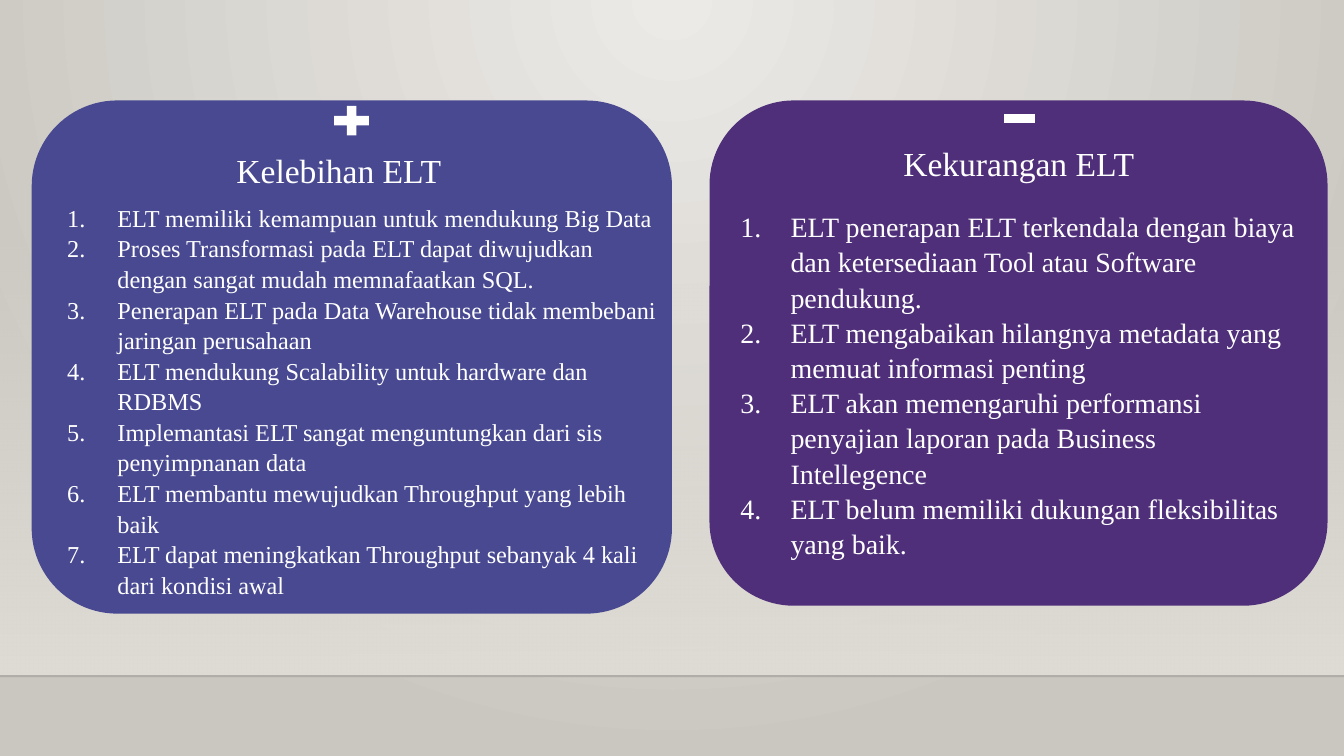
from dataclasses import dataclass

from lxml import etree
from pptx import Presentation
from pptx import util as u
from pptx.dml.color import RGBColor
from pptx.enum import shapes, text
from pptx.oxml.ns import qn


@dataclass(frozen=True)
class Theme:
    font: str = "Times New Roman"
    white: str = "FFFFFF"
    blue: str = "484991"
    purple: str = "4F2F79"
    glow: str = "ECEAE7"
    backdrop: str = "CAC7C1"
    wall: str = "DFDBD5"
    edge: str = "000001"
    heading_size: float = 18
    long_list_size: float = 13
    short_list_size: float = 15


THEME = Theme()
SLIDE_WIDTH, SLIDE_HEIGHT = 25.4, 14.29
FLOOR_TOP = 12.78
COMPARISON_LAYOUT = 4

ADVANTAGES = [
    "ELT memiliki kemampuan untuk mendukung Big Data",
    "Proses Transformasi pada ELT dapat diwujudkan dengan sangat mudah memnafaatkan SQL.",
    "Penerapan ELT pada Data Warehouse tidak membebani jaringan perusahaan",
    "ELT mendukung Scalability untuk hardware dan RDBMS",
    "Implemantasi ELT sangat menguntungkan dari sis penyimpnanan data",
    "ELT membantu mewujudkan Throughput yang lebih baik",
    "ELT dapat meningkatkan Throughput sebanyak 4 kali dari kondisi awal",
]
DRAWBACKS = [
    "ELT penerapan ELT terkendala dengan biaya dan ketersediaan Tool atau Software pendukung.",
    "ELT mengabaikan hilangnya metadata yang memuat informasi penting",
    "ELT akan memengaruhi performansi penyajian laporan pada Business Intellegence",
    "ELT belum memiliki dukungan fleksibilitas yang baik.",
]


def rgb(colour):
    return RGBColor.from_string(colour)


def cm(lengths):
    return [u.Cm(length) for length in lengths]


def add_xml(parent, tag, **attributes):
    return etree.SubElement(parent, qn(tag), attributes)


def set_gradient(fill, start, end):
    fill.gradient()
    for stop, colour in zip(fill.gradient_stops, (start, end)):
        stop.color.rgb = rgb(colour)


def set_opacity(element, percent):
    """Make the first colour found inside the element translucent."""
    colour = next(element.iter(qn("a:srgbClr")))
    add_xml(colour, "a:alpha", val=str(percent * 1000))


def add_plain_shape(slide, kind, box, colour=None):
    shape = slide.shapes.add_shape(kind, *cm(box))
    shape.shadow.inherit = False
    shape.line.fill.background()
    if colour:
        shape.fill.solid()
        shape.fill.fore_color.rgb = rgb(colour)
    return shape


def paint_background(slide):
    """Light falls in a circle from the top centre."""
    set_gradient(slide.background.fill, THEME.glow, THEME.backdrop)
    gradient = next(slide.element.iter(qn("a:gradFill")))
    gradient.remove(gradient.find(qn("a:lin")))
    circle = add_xml(gradient, "a:path", path="circle")
    add_xml(circle, "a:fillToRect", l="43000", r="43000", b="100000")


def add_wall(slide):
    """A wall that fades out upwards, closed by the floor line."""
    height = 8.56
    wall = add_plain_shape(slide, shapes.MSO_SHAPE.RECTANGLE,
                           (0, FLOOR_TOP - height, SLIDE_WIDTH, height))
    set_gradient(wall.fill, THEME.wall, THEME.wall)
    wall.fill.gradient_angle = 270
    set_opacity(wall.element.spPr, 0)

    floor = slide.shapes.add_connector(
        shapes.MSO_CONNECTOR.STRAIGHT, *cm((0, FLOOR_TOP, SLIDE_WIDTH, FLOOR_TOP)))
    floor.line.width = u.Pt(1)
    floor.line.color.rgb = rgb(THEME.edge)
    set_opacity(floor.element.spPr, 20)
    add_xml(floor.element.spPr, "a:effectLst")


def number_paragraph(paragraph):
    indent = u.Cm(0.95)
    properties = paragraph._p.get_or_add_pPr()
    properties.set("marL", str(indent))
    properties.set("indent", str(-indent))
    add_xml(add_xml(properties, "a:buClr"), "a:srgbClr", val=THEME.white)
    add_xml(properties, "a:buFont", typeface=THEME.font)
    add_xml(properties, "a:buAutoNum", type="arabicPeriod")


def write_text(slide, index, lines, *, box, size, align, numbered=False):
    """Fill a placeholder and bring it in front of the cards."""
    holder = slide.placeholders[index]
    slide.shapes.element.append(holder.element)
    holder.left, holder.top, holder.width, holder.height = cm(box)
    frame = holder.text_frame
    frame.word_wrap = True
    frame.auto_size = text.MSO_AUTO_SIZE.NONE
    frame.vertical_anchor = text.MSO_ANCHOR.TOP
    frame.margin_left = frame.margin_right = u.Cm(0.25)
    frame.margin_top = frame.margin_bottom = u.Cm(0.25)
    frame.text = "\n".join(lines)
    for paragraph in frame.paragraphs:
        if numbered:
            number_paragraph(paragraph)
        paragraph.alignment = align
        paragraph.line_spacing = 1.05
        paragraph.space_before = u.Pt(0)
        font = paragraph.runs[0].font
        font.name = THEME.font
        font.size = u.Pt(size)
        font.bold = False
        font.color.rgb = rgb(THEME.white)


def add_side(slide, first_index, heading, points, *, colour, sign, size,
             card_box, sign_box, heading_box, list_box):
    """One half of the comparison: card, sign, heading and numbered points."""
    add_plain_shape(slide, shapes.MSO_SHAPE.ROUNDED_RECTANGLE, card_box, colour)
    add_plain_shape(slide, sign, sign_box, THEME.white)
    write_text(slide, first_index, [heading], box=heading_box,
               size=THEME.heading_size, align=text.PP_ALIGN.CENTER)
    write_text(slide, first_index + 1, points, box=list_box, size=size,
               align=text.PP_ALIGN.LEFT, numbered=True)


def main():
    deck = Presentation()
    deck.slide_width, deck.slide_height = cm((SLIDE_WIDTH, SLIDE_HEIGHT))
    slide = deck.slides.add_slide(deck.slide_layouts[COMPARISON_LAYOUT])
    slide.shapes.element.remove(slide.shapes.title.element)

    paint_background(slide)
    add_wall(slide)
    add_side(slide, 1, "Kelebihan ELT", ADVANTAGES,
             colour=THEME.blue, sign=shapes.MSO_SHAPE.MATH_PLUS,
             size=THEME.long_list_size,
             card_box=(0.6, 1.9, 12.1, 9.7), sign_box=(6.2, 1.9, 0.89, 0.76),
             heading_box=(0.74, 2.54, 11.33, 1.22),
             list_box=(1.02, 3.56, 11.76, 6.12))
    add_side(slide, 3, "Kekurangan ELT", DRAWBACKS,
             colour=THEME.purple, sign=shapes.MSO_SHAPE.MATH_MINUS,
             size=THEME.short_list_size,
             card_box=(13.41, 1.9, 11.68, 9.55), sign_box=(18.87, 1.86, 0.79, 0.76),
             heading_box=(13.59, 2.41, 11.33, 1.22),
             list_box=(13.74, 3.68, 11, 5.94))
    deck.save("out.pptx")


if __name__ == "__main__":
    main()
